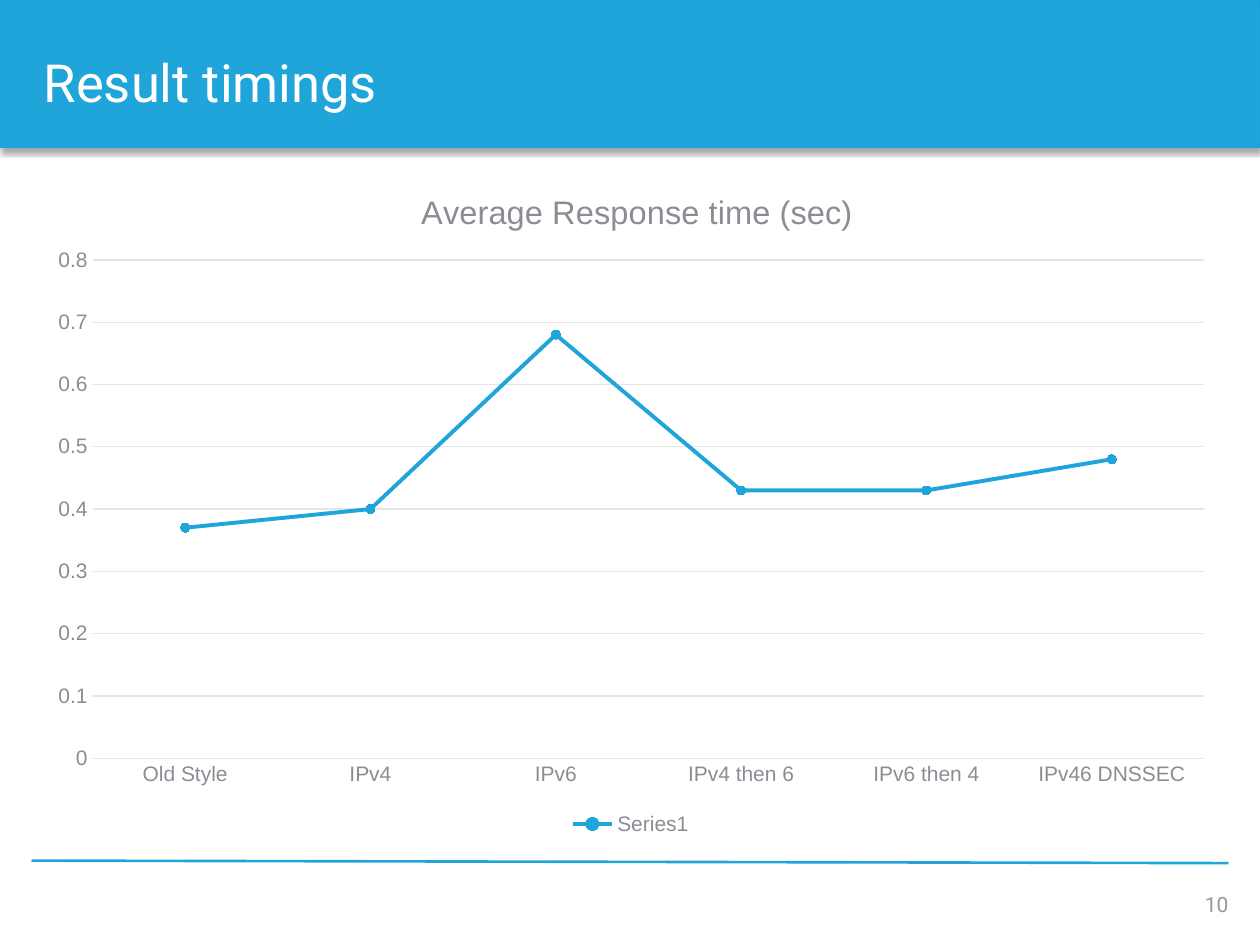
import pptx
import pptx.util
import pptx.chart.data
import pptx.dml.color
import pptx.enum.chart
import pptx.enum.shapes
import pptx.enum.text
import pptx.oxml
import pptx.oxml.ns

Pt = pptx.util.Pt
RGB = pptx.dml.color.RGBColor
qn = pptx.oxml.ns.qn
Align = pptx.enum.text.PP_ALIGN
Anchor = pptx.enum.text.MSO_ANCHOR

BLUE = RGB(0x1F, 0xA5, 0xDA)
EDGE = RGB(0x1A, 0xA3, 0xDA)
WHITE = RGB(0xFF, 0xFF, 0xFF)
GRAY = RGB(0x8D, 0x8C, 0x94)
PALE = RGB(0xE5, 0xE4, 0xE6)
FAINT = RGB(0x98, 0x98, 0x9A)

LEFT, RIGHT = 18, 702

TIMES = {
    "Old Style": 0.37,
    "IPv4": 0.40,
    "IPv6": 0.68,
    "IPv4 then 6": 0.43,
    "IPv6 then 4": 0.43,
    "IPv46 DNSSEC": 0.48,
}


def write(frame, text, font="Arial", size=12, color=GRAY, align=Align.LEFT, space=None):
    """Put formatted text in the first paragraph of a frame."""
    para = frame.paragraphs[0]
    para.alignment = align
    if space:
        para.line_spacing = space
    run = para.add_run()
    run.text = text
    style(run.font, font, size, color)


def style(face, font, size, color):
    face.name, face.size, face.bold = font, Pt(size), False
    face.color.rgb = color


def place(part, index, **spots):
    """Give a chart part a fixed layout, in fractions of the chart."""
    for old in part.findall(qn("c:layout")):
        part.remove(old)
    target = '<c:layoutTarget val="inner"/>' if "w" in spots else ""
    modes = "".join(f'<c:{k}Mode val="edge"/>' for k in "xy")
    marks = "".join(f'<c:{k} val="{v}"/>' for k, v in spots.items())
    names = pptx.oxml.ns.nsdecls("c")
    part.insert(index, pptx.oxml.parse_xml(
        f"<c:layout {names}><c:manualLayout>{target}{modes}{marks}"
        "</c:manualLayout></c:layout>"))


class Deck:
    def __init__(self, width, height):
        self.show = pptx.Presentation()
        self.show.slide_width, self.show.slide_height = Pt(width), Pt(height)
        self.slide = self.show.slides.add_slide(self.show.slide_layouts[6])

    def band(self, *box):
        """Filled bar with a soft shadow below it."""
        bar = self.slide.shapes.add_shape(
            pptx.enum.shapes.MSO_SHAPE.RECTANGLE, *map(Pt, box))
        bar.fill.solid()
        bar.fill.fore_color.rgb = BLUE
        bar.line.color.rgb = EDGE
        bar.line.width = Pt(0.75)
        bar.shadow.inherit = False
        names = pptx.oxml.ns.nsdecls("a")
        bar._element.spPr.find(qn("a:effectLst")).append(pptx.oxml.parse_xml(
            f'<a:outerShdw {names} blurRad="{Pt(3.1)}" dist="{Pt(1.8)}" dir="5400000">'
            '<a:srgbClr val="000000"><a:alpha val="35000"/></a:srgbClr></a:outerShdw>'))

    def rule(self, *ends):
        line = self.slide.shapes.add_connector(
            pptx.enum.shapes.MSO_CONNECTOR.STRAIGHT, *map(Pt, ends))
        line.line.color.rgb = BLUE
        line.line.width = Pt(1.5)
        props = line._element.spPr
        props.append(props.makeelement(qn("a:effectLst"), {}))

    def label(self, text, box, inset, **form):
        frame = self.slide.shapes.add_textbox(*map(Pt, box)).text_frame
        frame.word_wrap = True
        frame.vertical_anchor = Anchor.MIDDLE
        (frame.margin_left, frame.margin_top,
         frame.margin_right, frame.margin_bottom) = map(Pt, inset)
        write(frame, text, **form)

    def chart(self, title, series, points, box):
        data = pptx.chart.data.CategoryChartData(number_format="General")
        data.categories = list(points)
        data.add_series(series, list(points.values()))
        kinds = pptx.enum.chart
        chart = self.slide.shapes.add_chart(
            kinds.XL_CHART_TYPE.LINE_MARKERS, *map(Pt, box), data).chart
        style(chart.font, "Arial", 12, GRAY)

        # Title and plot positions
        chart.has_title = True
        write(chart.chart_title.text_frame, title, size=18.6, align=Align.CENTER)
        chart.chart_title.include_in_layout = False
        place(chart.chart_title._element, 1, x=0.32, y=0.04)
        place(chart._chartSpace.chart.plotArea, 0, x=0.05, y=0.15, w=0.93, h=0.73)

        # Legend
        chart.has_legend = True
        chart.legend.position = kinds.XL_LEGEND_POSITION.BOTTOM
        chart.legend.include_in_layout = False
        style(chart.legend.font, "Arial", 12, GRAY)

        # Axes
        cats, vals = chart.category_axis, chart.value_axis
        for axis in (cats, vals):
            axis.major_tick_mark = axis.minor_tick_mark = kinds.XL_TICK_MARK.NONE
            style(axis.tick_labels.font, "Arial", 12, GRAY)
        vals.minimum_scale, vals.maximum_scale, vals.major_unit = 0, 0.8, 0.1
        vals.has_major_gridlines = True
        vals.format.line.fill.background()
        for item in (cats, vals.major_gridlines):
            item.format.line.color.rgb = PALE
            item.format.line.width = Pt(0.75)

        # Line and markers
        plot = chart.plots[0]
        plot.vary_by_categories = False
        trace = plot.series[0]
        trace.smooth = False
        trace.format.line.color.rgb = BLUE
        trace.format.line.width = Pt(2.25)
        trace.marker.style = kinds.XL_MARKER_STYLE.CIRCLE
        trace.marker.size = 5
        trace.marker.format.fill.solid()
        trace.marker.format.fill.fore_color.rgb = BLUE
        trace.marker.format.line.color.rgb = BLUE


def main():
    deck = Deck(720, 540)

    # Header and footer rule
    deck.band(0, 0, 720, 84.5)
    deck.rule(LEFT, 491.8, RIGHT, 493.2)

    # Response times
    deck.chart("Average Response time (sec)", "Series1", TIMES,
               (18.7, 90, 683.3, 390.2))

    # Slide number and title
    deck.label("10", (534, 493.2, RIGHT - 534, 28.8), (0, 18, 0, 0),
               font="Roboto", color=FAINT, align=Align.RIGHT)
    deck.label("Result timings", (LEFT, 18.7, RIGHT - LEFT, 59.8), (7.2, 3.6, 7.2, 3.6),
               font="Roboto", size=30, color=WHITE, space=0.9)

    deck.show.save("out.pptx")


if __name__ == "__main__":
    main()
